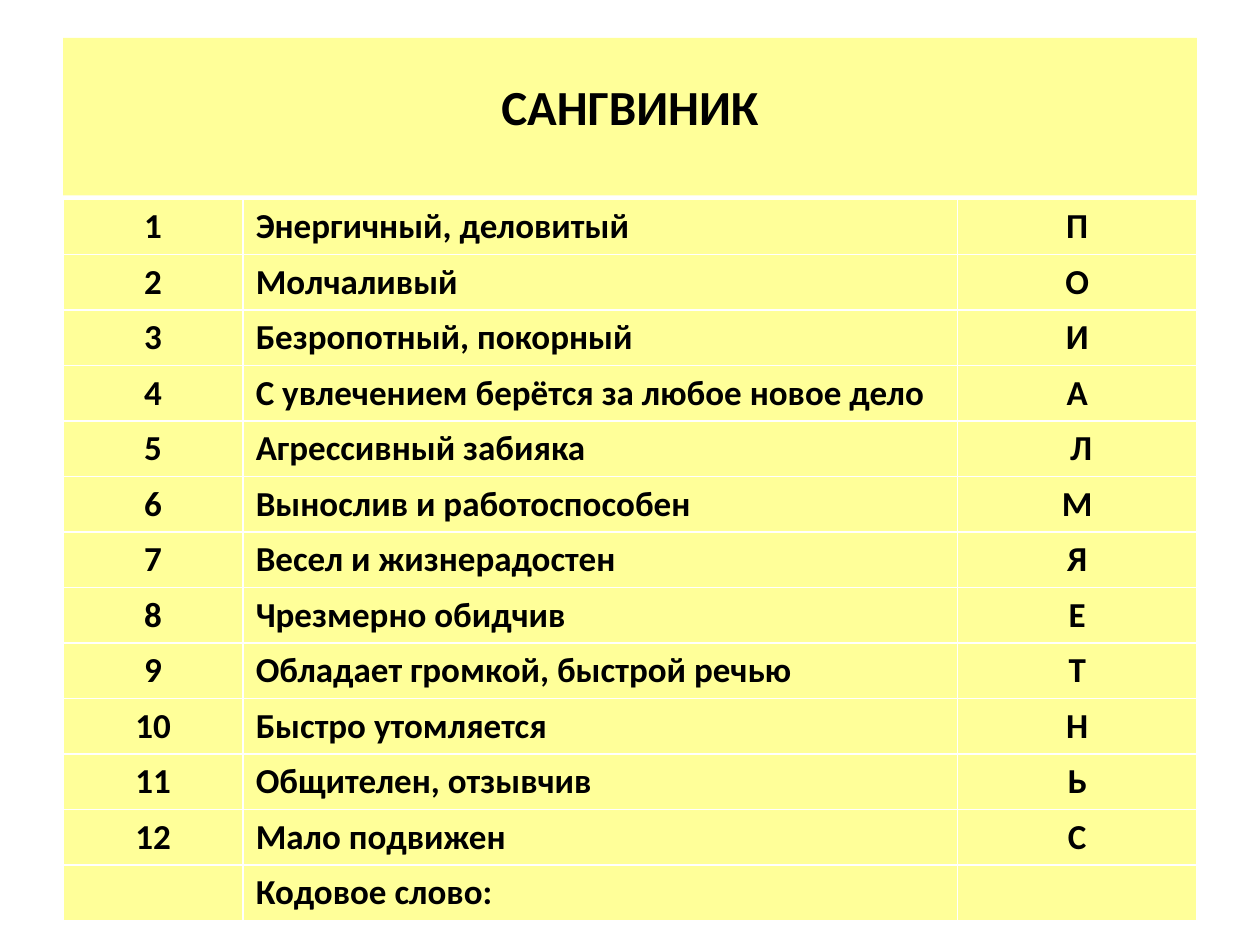
"""Build the slide with the sanguine temperament word puzzle."""
from pptx import Presentation
from pptx.dml.color import RGBColor
from pptx.enum.text import MSO_ANCHOR, MSO_AUTO_SIZE, PP_ALIGN
from pptx.util import Inches, Pt

CENTER = PP_ALIGN.CENTER
JUSTIFY = PP_ALIGN.JUSTIFY
MIDDLE = MSO_ANCHOR.MIDDLE
NO_AUTOFIT = MSO_AUTO_SIZE.NONE
COLORS = {"panel": "FFFF99", "text": "000000"}
COLUMN_WIDTHS = [1.43, 5.67, 1.9]
ROW_HEIGHT = 0.44
TRAITS = [
    ("Энергичный, деловитый", "П"),
    ("Молчаливый", "О"),
    ("Безропотный, покорный", "И"),
    ("С увлечением берётся за любое новое дело", "А"),
    ("Агрессивный забияка", " Л"),
    ("Вынослив и работоспособен", "М"),
    ("Весел и жизнерадостен", "Я"),
    ("Чрезмерно обидчив", "Е"),
    ("Обладает громкой, быстрой речью", "Т"),
    ("Быстро утомляется", "Н"),
    ("Общителен, отзывчив", "Ь"),
    ("Мало подвижен", "С"),
]


def paint(fill):
    fill.solid()
    fill.fore_color.rgb = RGBColor.from_string(COLORS["panel"])


def style_text(paragraph, size, alignment):
    paragraph.alignment = alignment
    font = paragraph.font
    if paragraph.runs:
        font = paragraph.runs[0].font
    font.name = "Calibri"
    font.size = Pt(size)
    font.bold = True
    font.color.rgb = RGBColor.from_string(COLORS["text"])


prs = Presentation()
prs.slide_width = Inches(10)
prs.slide_height = Inches(7.5)
slide = prs.slides.add_slide(prs.slide_layouts[5])

heading = slide.shapes.title
heading.left, heading.top = Inches(0.5), Inches(0.3)
heading.width, heading.height = Inches(9), Inches(1.25)
paint(heading.fill)
heading_frame = heading.text_frame
heading_frame.text = "САНГВИНИК"
heading_frame.auto_size = NO_AUTOFIT
heading_frame.vertical_anchor = MIDDLE
heading_frame.margin_bottom = Inches(0.22)
style_text(heading_frame.paragraphs[0], 28, CENTER)

rows = [(str(number), *trait) for number, trait in enumerate(TRAITS, 1)]
rows.append(("", "Кодовое слово:", ""))
puzzle = slide.shapes.add_table(
    len(rows), len(COLUMN_WIDTHS), Inches(0.5), Inches(1.58),
    Inches(sum(COLUMN_WIDTHS)), Inches(ROW_HEIGHT * len(rows)),
).table
for column, width in zip(puzzle.columns, COLUMN_WIDTHS):
    column.width = Inches(width)

for row_index, texts in enumerate(rows):
    puzzle.rows[row_index].height = Inches(ROW_HEIGHT)
    for column_index, text in enumerate(texts):
        cell = puzzle.cell(row_index, column_index)
        paint(cell.fill)
        cell.text_frame.text = text
        alignment = JUSTIFY if column_index == 1 else CENTER
        style_text(cell.text_frame.paragraphs[0], 20, alignment)

prs.save("out.pptx")
